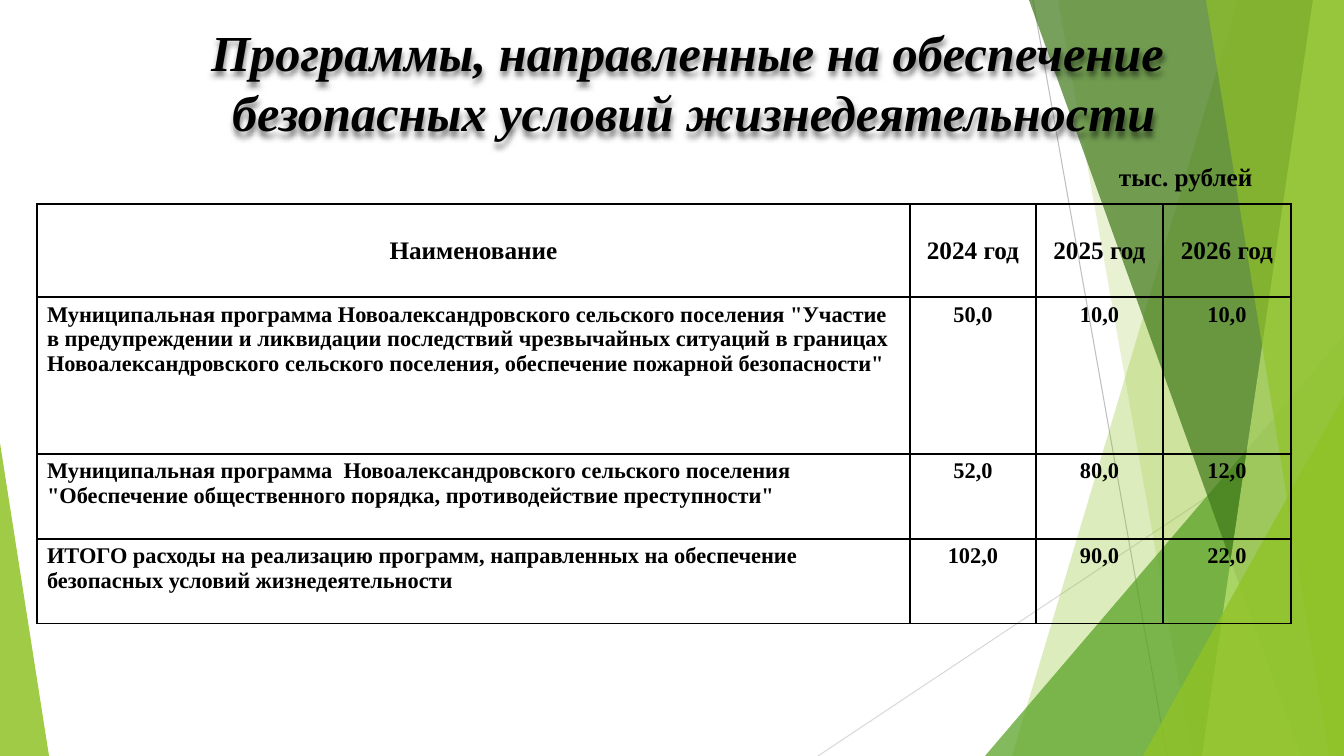
from lxml import etree
from pptx import Presentation
from pptx.dml.color import RGBColor
from pptx.enum.shapes import MSO_CONNECTOR, MSO_SHAPE
from pptx.enum.text import MSO_ANCHOR, PP_ALIGN
from pptx.oxml import parse_xml
from pptx.oxml.ns import qn
from pptx.util import Pt

LEFT, CENTER = PP_ALIGN.LEFT, PP_ALIGN.CENTER
TOP, MIDDLE = MSO_ANCHOR.TOP, MSO_ANCHOR.MIDDLE
STRAIGHT, TRIANGLE = MSO_CONNECTOR.STRAIGHT, MSO_SHAPE.ISOSCELES_TRIANGLE

WIDTH, HEIGHT = 1344, 756
EMU_PER_PX = 12192000 / WIDTH
FONT = "Times New Roman"
NAMESPACE = 'xmlns:a="http://schemas.openxmlformats.org/drawingml/2006/main"'
COLORS = {
    "text": "000000", "line": "BFBFBF", "pale line": "D9D9D9",
    "lime": "90C226", "green": "54A021", "dark": "3F7819", "light": "C0E474",
}

TITLE = ["Программы, направленные на обеспечение ",
         "безопасных условий жизнедеятельности"]
COLUMNS = [873, 126, 127, 128]
ROWS = [93, 157, 85, 85]
PROGRAMS = [
    ["Наименование", "2024 год", "2025 год", "2026 год"],
    ['Муниципальная программа Новоалександровского сельского поселения "Участие '
     'в предупреждении и ликвидации последствий чрезвычайных ситуаций в границах '
     'Новоалександровского сельского поселения, обеспечение пожарной безопасности"',
     "50,0", "10,0", "10,0"],
    ['Муниципальная программа  Новоалександровского сельского поселения '
     '"Обеспечение общественного порядка, противодействие преступности"',
     "52,0", "80,0", "12,0"],
    ["ИТОГО расходы на реализацию программ, направленных на обеспечение "
     "безопасных условий жизнедеятельности", "102,0", "90,0", "22,0"],
]


def px(length):
    return round(length * EMU_PER_PX)


class Painter:
    def __init__(self, page):
        self.page = page
        self.shapes = page.shapes

    def color(self, name):
        return RGBColor.from_string(COLORS[name])

    def set_text(self, frame, lines, size, align=LEFT, italic=False):
        frame.text = "\n".join(lines)
        for para in frame.paragraphs:
            para.alignment = align
            font = para.font
            font.name, font.size = FONT, Pt(size)
            font.bold, font.italic = True, italic
            font.color.rgb = self.color("text")

    def line(self, start, end, color):
        line = self.shapes.add_connector(STRAIGHT, *map(px, start + end))
        line.line.color.rgb = self.color(color)
        line.line.width = Pt(0.75)
        etree.SubElement(line.element.spPr, qn("a:effectLst"))

    def tint(self, shape, color, opacity):
        """Give a facet a translucent fill without outline or shadow."""
        shape.shadow.inherit = False
        shape.line.fill.background()
        shape.fill.solid()
        shape.fill.fore_color.rgb = self.color(color)
        rgb = shape.element.spPr.find(".//" + qn("a:srgbClr"))
        etree.SubElement(rgb, qn("a:alpha"), val=str(opacity * 1000))

    def band(self, top_x, bottom_x, color, opacity):
        """Fill the page from a slanted edge to its right side."""
        builder = self.shapes.build_freeform(top_x, 0, scale=EMU_PER_PX)
        builder.add_line_segments(
            [(WIDTH, 0), (WIDTH, HEIGHT), (bottom_x, HEIGHT)], close=True)
        self.tint(builder.convert_to_shape(), color, opacity)

    def corner(self, x, y, width, apex, color, opacity):
        """Draw a right triangle standing on the bottom edge of the page."""
        shape = self.shapes.add_shape(
            TRIANGLE, px(x), px(y), px(width), px(HEIGHT - y))
        shape.adjustments[0] = apex
        self.tint(shape, color, opacity)

    def title(self, lines, x, y, width, height):
        box = self.shapes.title
        box.element.getparent().append(box.element)
        box.left, box.top, box.width, box.height = map(px, (x, y, width, height))
        box.fill.background()
        box.element.spPr.append(parse_xml(
            f'<a:effectLst {NAMESPACE}><a:outerShdw blurRad="{px(6)}" dist="{px(5)}" '
            'dir="5400000" algn="t" rotWithShape="0"><a:srgbClr val="000000">'
            '<a:alpha val="50000"/></a:srgbClr></a:outerShdw></a:effectLst>'))
        frame = box.text_frame
        frame.margin_left = frame.margin_right = 0
        frame.margin_top = frame.margin_bottom = 0
        frame.vertical_anchor = MIDDLE
        frame.word_wrap = True
        self.set_text(frame, lines, 36, CENTER, italic=True)

    def label(self, text, x, y, width, height):
        box = self.shapes.add_textbox(*map(px, (x, y, width, height)))
        box.text_frame.word_wrap = True
        self.set_text(box.text_frame, [text], 18)

    def border(self, cell):
        properties = cell._tc.get_or_add_tcPr()
        for side in ("lnL", "lnR", "lnT", "lnB"):
            properties.append(parse_xml(
                f'<a:{side} {NAMESPACE} w="{Pt(1)}"><a:solidFill>'
                f'<a:srgbClr val="{COLORS["text"]}"/></a:solidFill></a:{side}>'))

    def table(self, x, y, columns, rows, values):
        table = self.shapes.add_table(
            len(rows), len(columns), px(x), px(y),
            px(sum(columns)), px(sum(rows))).table
        table.first_row = table.horz_banding = False
        for column, width in zip(table.columns, columns):
            column.width = px(width)
        for r, (row, height) in enumerate(zip(table.rows, rows)):
            row.height = px(height)
            for c, text in enumerate(values[r]):
                cell = table.cell(r, c)
                self.border(cell)
                cell.fill.background()
                header = r == 0
                cell.vertical_anchor = MIDDLE if header else TOP
                self.set_text(cell.text_frame, [text], 18 if header else 16,
                              CENTER if header or c else LEFT)


def main():
    deck = Presentation()
    deck.slide_width, deck.slide_height = px(WIDTH), px(HEIGHT)
    painter = Painter(deck.slides.add_slide(deck.slide_layouts[5]))

    painter.line((1033, 0), (1167, HEIGHT), "line")
    painter.line((WIDTH, 406), (818, HEIGHT), "pale line")
    painter.band(1238, 1012, "lime", 30)
    painter.band(1058, 1192, "lime", 20)
    painter.corner(985, 336, 359, 1, "green", 72)
    painter.band(1029, 1301, "dark", 70)
    painter.band(1313, 1202, "light", 70)
    painter.band(1206, 1329, "lime", 65)
    painter.corner(1143, 396, 201, 1, "lime", 80)
    painter.corner(0, 443, 49, 0, "lime", 85)

    painter.title(TITLE, 105, 30, 1178, 103)
    painter.table(37, 204, COLUMNS, ROWS, PROGRAMS)
    painter.label("тыс. рублей", 1109, 156, 201, 40)
    deck.save("out.pptx")


if __name__ == "__main__":
    main()
